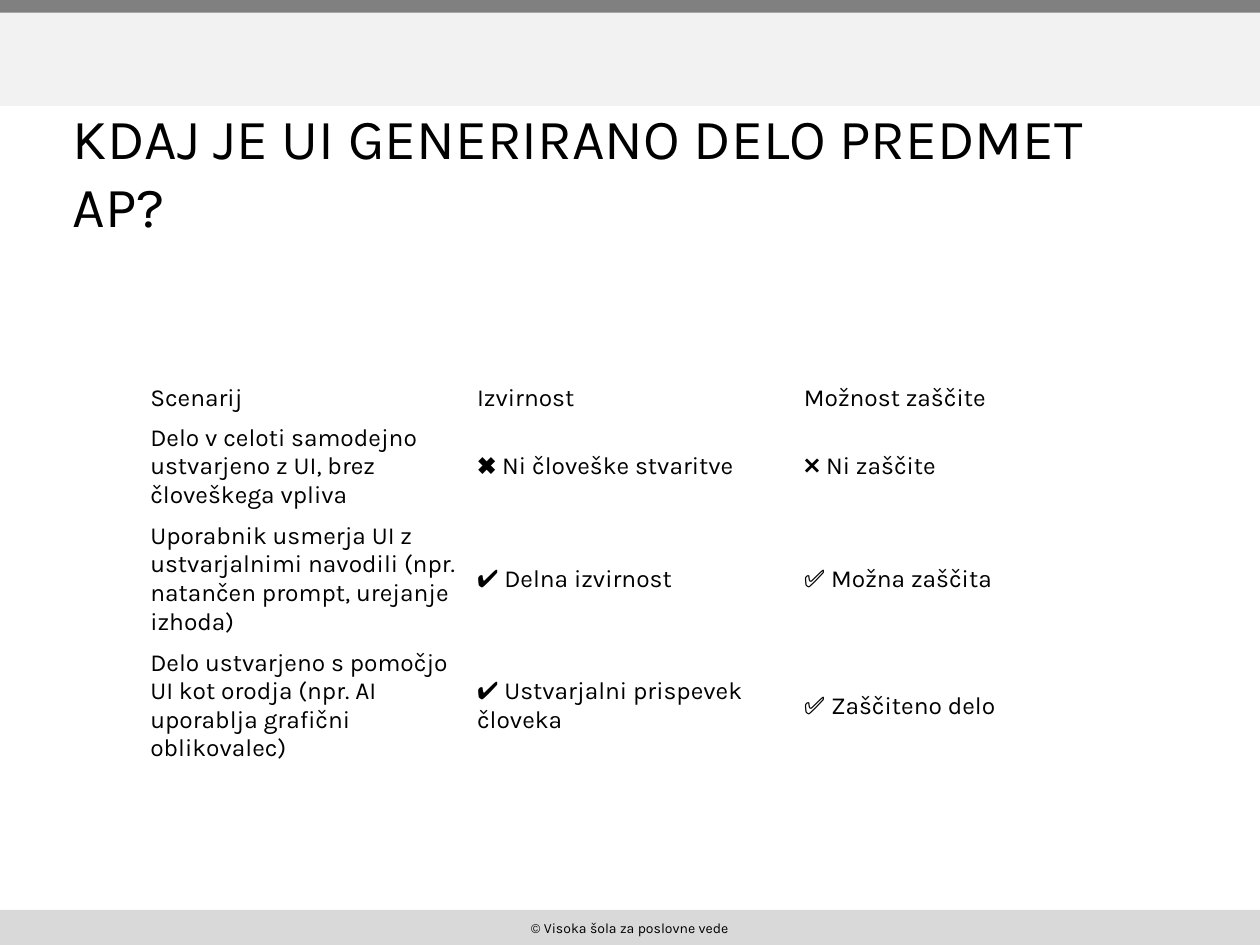
from dataclasses import dataclass
from pptx import Presentation
from pptx.dml.color import RGBColor as Rgb
from pptx.enum.shapes import MSO_SHAPE as Shape
from pptx.enum.text import MSO_ANCHOR as Anchor, PP_ALIGN as Align
from pptx.util import Pt


@dataclass(frozen=True)
class Theme:
    font: str = "Karla"
    ink: str = "000000"
    foot: str = "D9D9D9"
    head: str = "F2F2F2"
    strip: str = "808080"
    title: float = 32.4
    body: float = 14
    small: float = 8


@dataclass(frozen=True)
class Band:
    top: float
    height: float
    color: str
    text: str = ""


THEME = Theme()
WIDTH, HEIGHT = 720, 540

BANDS = [
    Band(520, 20, THEME.foot, "© Visoka šola za poslovne vede"),
    Band(0, 60.5, THEME.head),
    Band(0, 7.2, THEME.strip),
]

TITLE = "KDAJ JE UI GENERIRANO DELO PREDMET AP?"

COL = 186.75
ROWS = [21.6, 54, 69.9, 54]
CELLS = [
    ("Scenarij", "Izvirnost", "Možnost zaščite"),
    ("Delo v celoti samodejno ustvarjeno z UI, brez človeškega vpliva",
     "✖️ Ni človeške stvaritve", "❌ Ni zaščite"),
    ("Uporabnik usmerja UI z ustvarjalnimi navodili "
     "(npr. natančen prompt, urejanje izhoda)",
     "✔️ Delna izvirnost", "✅ Možna zaščita"),
    ("Delo ustvarjeno s pomočjo UI kot orodja "
     "(npr. AI uporablja grafični oblikovalec)",
     "✔️ Ustvarjalni prispevek človeka", "✅ Zaščiteno delo"),
]


def write(frame, text: str, size: float, align=Align.LEFT) -> None:
    frame.word_wrap = True
    para = frame.paragraphs[0]
    para.alignment = align
    run = para.add_run()
    run.text = text
    run.font.name = THEME.font
    run.font.size = Pt(size)
    run.font.color.rgb = Rgb.from_string(THEME.ink)


def draw_band(slide, band: Band) -> None:
    bar = slide.shapes.add_shape(
        Shape.RECTANGLE, 0, Pt(band.top), Pt(WIDTH), Pt(band.height))
    bar.shadow.inherit = False
    bar.fill.solid()
    bar.fill.fore_color.rgb = Rgb.from_string(band.color)
    bar.line.fill.background()
    if band.text:
        bar.text_frame.vertical_anchor = Anchor.MIDDLE
        write(bar.text_frame, band.text, THEME.small, Align.CENTER)


def draw_title(slide) -> None:
    box = slide.shapes.add_textbox(Pt(34.6), Pt(60.5), Pt(648), Pt(74))
    box.text_frame.vertical_anchor = Anchor.MIDDLE
    write(box.text_frame, TITLE, THEME.title)


def draw_table(slide) -> None:
    cols = len(CELLS[0])
    table = slide.shapes.add_table(
        len(ROWS), cols, Pt(80.6), Pt(216.7), Pt(COL * cols), Pt(sum(ROWS))).table
    table.first_row = table.horz_banding = False
    for col in table.columns:
        col.width = Pt(COL)
    for row, high, texts in zip(table.rows, ROWS, CELLS):
        row.height = Pt(high)
        for cell, text in zip(row.cells, texts):
            cell.fill.background()
            cell.vertical_anchor = Anchor.MIDDLE
            cell.margin_left = cell.margin_right = Pt(5.3)
            cell.margin_top = cell.margin_bottom = Pt(2.65)
            write(cell.text_frame, text, THEME.body)


def main() -> None:
    deck = Presentation()
    deck.slide_width, deck.slide_height = Pt(WIDTH), Pt(HEIGHT)
    slide = deck.slides.add_slide(deck.slide_layouts[6])
    # Header and footer bands
    for band in BANDS:
        draw_band(slide, band)
    # Title and scenario table
    draw_title(slide)
    draw_table(slide)
    deck.save("out.pptx")


if __name__ == "__main__":
    main()
